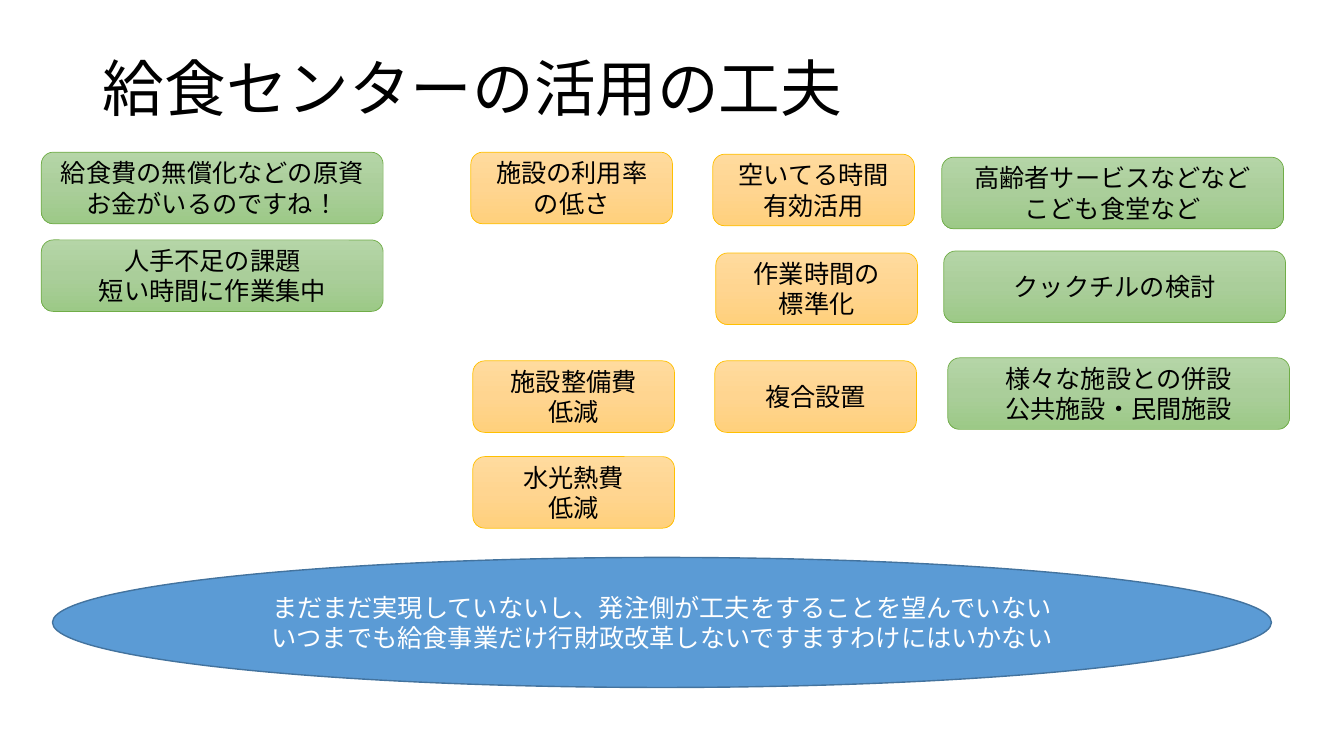
from copy import deepcopy
from dataclasses import dataclass

from lxml.etree import SubElement
from pptx import Presentation
from pptx.dml.color import RGBColor
from pptx.enum.lang import MSO_LANGUAGE_ID
from pptx.enum.shapes import MSO_SHAPE
from pptx.enum.text import MSO_ANCHOR, PP_ALIGN
from pptx.oxml.ns import qn
from pptx.util import Inches, Pt


@dataclass(frozen=True)
class Theme:
    title_font: str = "Noto Sans CJK JP"
    body_font: str = "TeX Gyre Adventor"
    title_size: int = 44
    body_size: int = 18
    black: str = "000000"
    white: str = "FFFFFF"
    green: tuple = ("B5D5A7", "AACE9A", "9CC987")
    green_line: str = "70AD47"
    orange: tuple = ("FFDB9E", "FFD590", "FFD07C")
    orange_line: str = "FFC000"
    blue: str = "5B9BD5"
    blue_line: str = "43739E"


THEME = Theme()
CARD_HEIGHT = 0.71
GREEN_CARD = (3.39, THEME.green, THEME.green_line)
ORANGE_CARD = (2, THEME.orange, THEME.orange_line)

CARDS = [
    (GREEN_CARD, 0.41, 1.51, ["給食費の無償化などの原資", "お金がいるのですね！"]),
    (GREEN_CARD, 0.41, 2.38, ["人手不足の課題", "短い時間に作業集中"]),
    (ORANGE_CARD, 4.67, 1.51, ["施設の利用率", "の低さ"]),
    (ORANGE_CARD, 4.69, 3.58, ["施設整備費", "低減"]),
    (ORANGE_CARD, 4.69, 4.53, ["水光熱費", "低減"]),
    (ORANGE_CARD, 7.07, 1.53, ["空いてる時間", "有効活用"]),
    (ORANGE_CARD, 7.1, 2.51, ["作業時間の", "標準化"]),
    (ORANGE_CARD, 7.09, 3.58, ["複合設置"]),
    (GREEN_CARD, 9.34, 1.56, ["高齢者サービスなどなど", "こども食堂など"]),
    (GREEN_CARD, 9.36, 2.49, ["クックチルの検討"]),
    (GREEN_CARD, 9.4, 3.55, ["様々な施設との併設", "公共施設・民間施設"]),
]

CONCLUSION = [
    "まだまだ実現していないし、発注側が工夫をすることを望んでいない",
    "いつまでも給食事業だけ行財政改革しないですますわけにはいかない",
]


def apply(target, formats):
    for name, value in formats.items():
        setattr(target, name, value)


def write(frame, lines, font_name, size, color, align):
    apply(frame, {"word_wrap": True, "vertical_anchor": MSO_ANCHOR.MIDDLE})
    for index, line in enumerate(lines):
        paragraph = frame.add_paragraph() if index else frame.paragraphs[0]
        paragraph.alignment = align
        run = paragraph.add_run()
        run.text = line
        apply(run.font, {
            "name": font_name,
            "size": Pt(size),
            "language_id": MSO_LANGUAGE_ID.JAPANESE,
        })
        run.font.color.rgb = RGBColor.from_string(color)
        SubElement(run._r.get_or_add_rPr(), qn("a:ea"), typeface=font_name)


def add_title(slide, text):
    title = slide.shapes.title
    apply(title, {
        "left": Inches(0.92),
        "top": Inches(0.4),
        "width": Inches(11.5),
        "height": Inches(0.93),
    })
    write(title.text_frame, [text], THEME.title_font, THEME.title_size,
          THEME.black, PP_ALIGN.LEFT)


def add_panel(slide, preset, box, line_color, line_width, lines, text_color):
    panel = slide.shapes.add_shape(preset, *map(Inches, box))
    panel.shadow.inherit = False
    panel.line.color.rgb = RGBColor.from_string(line_color)
    panel.line.width = Pt(line_width)
    write(panel.text_frame, lines, THEME.body_font, THEME.body_size,
          text_color, PP_ALIGN.CENTER)
    return panel


def fill_gradient(panel, colors):
    panel.fill.gradient()
    panel.fill.gradient_angle = 270
    stop_list = panel._element.spPr.find(qn("a:gradFill")).find(qn("a:gsLst"))
    middle = deepcopy(stop_list[0])
    stop_list.insert(1, middle)
    for index, (stop, color) in enumerate(zip(panel.fill.gradient_stops, colors)):
        stop.position = index / (len(colors) - 1)
        stop.color.rgb = RGBColor.from_string(color)


def add_card(slide, style, left, top, lines):
    width, colors, line_color = style
    card = add_panel(slide, MSO_SHAPE.ROUNDED_RECTANGLE,
                     (left, top, width, CARD_HEIGHT), line_color, 0.5,
                     lines, THEME.black)
    fill_gradient(card, colors)


def add_conclusion(slide, lines):
    conclusion = add_panel(slide, MSO_SHAPE.OVAL, (0.52, 5.53, 12.09, 1.29),
                           THEME.blue_line, 1, lines, THEME.white)
    conclusion.fill.solid()
    conclusion.fill.fore_color.rgb = RGBColor.from_string(THEME.blue)


def main():
    deck = Presentation()
    apply(deck, {"slide_width": Inches(13.33), "slide_height": Inches(7.5)})
    slide = deck.slides.add_slide(deck.slide_layouts.get_by_name("Title Only"))
    add_title(slide, "給食センターの活用の工夫")
    for card in CARDS:
        add_card(slide, *card)
    add_conclusion(slide, CONCLUSION)
    deck.save("out.pptx")


if __name__ == "__main__":
    main()
